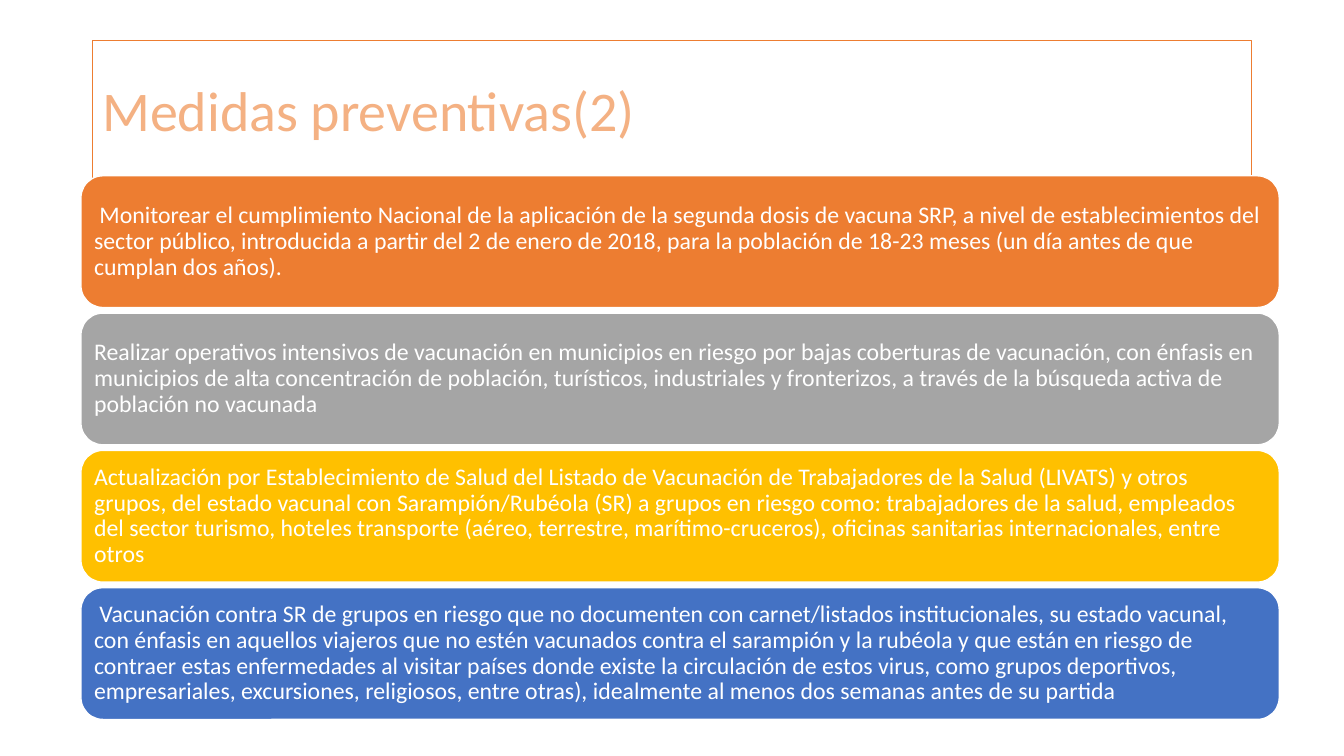
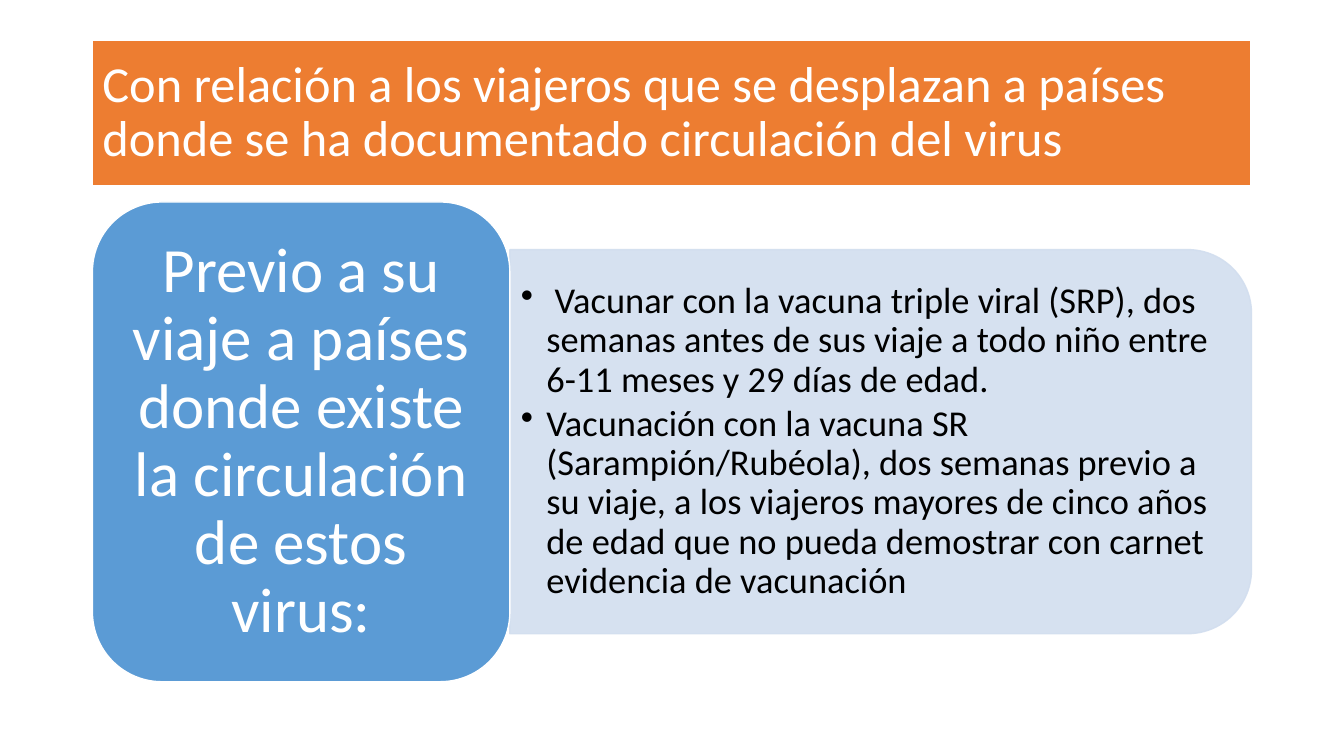
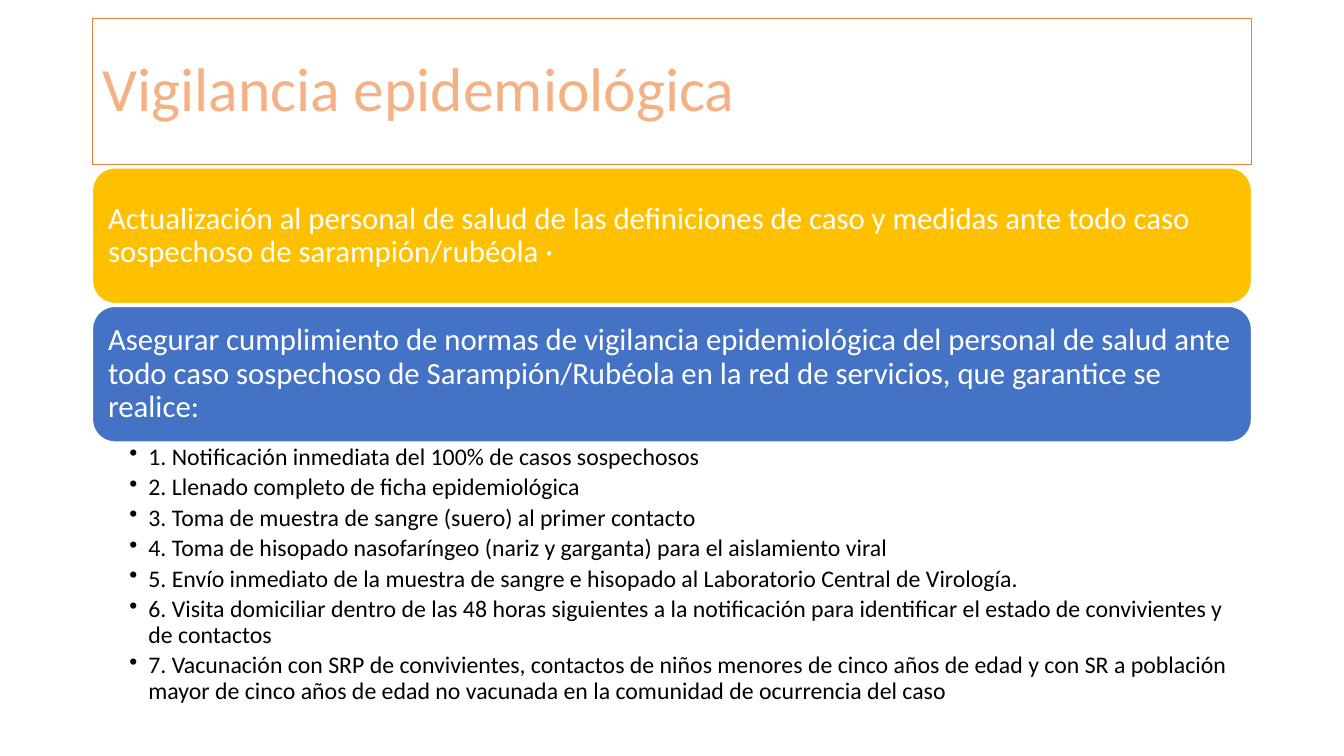
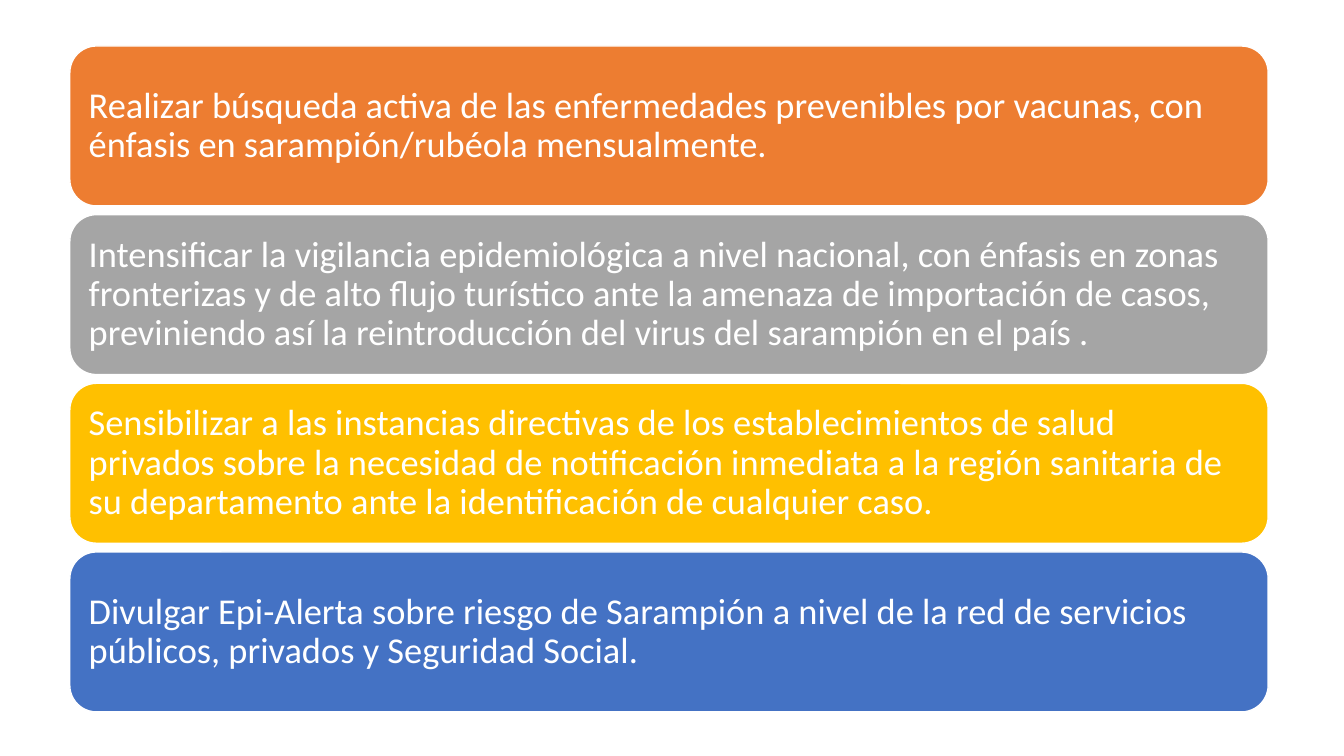
"""Build four slides on measles and rubella prevention and surveillance."""
from dataclasses import dataclass

from lxml import etree
from pptx import Presentation
from pptx import slide as sl
from pptx import util as u
from pptx.dml import color
from pptx.enum import shapes, text
from pptx.oxml import ns
from pptx.shapes import autoshape, base


@dataclass(frozen=True)
class Theme:
    font: str = "Calibri"
    white: str = "FFFFFF"
    black: str = "000000"
    orange: str = "ED7D31"
    peach: str = "F4B183"
    gray: str = "A5A5A5"
    gold: str = "FFC000"
    blue: str = "4472C4"
    sky: str = "5B9BD5"
    pale: str = "D2DEEF"
    small: int = 17
    medium: int = 22
    large: int = 26
    title_long: int = 36
    title_mid: int = 40
    title: int = 44
    lead: int = 45
    leading: float = 0.9


@dataclass(frozen=True)
class Box:
    left: float
    top: float
    width: float
    height: float


@dataclass(frozen=True)
class TextStyle:
    size: int
    color: str
    insets: tuple[float, float, float, float] = (0.25, 0.13, 0.25, 0.13)
    align: text.PP_ALIGN = text.PP_ALIGN.LEFT
    anchor: text.MSO_ANCHOR = text.MSO_ANCHOR.MIDDLE
    after: float = 0
    indent: float = 0


@dataclass(frozen=True)
class Bar:
    fill: str
    words: str


@dataclass(frozen=True)
class BarStack:
    first: Box
    gap: float
    size: int
    inset: float
    bars: tuple[Bar, ...]


T = Theme()
MARGIN, CONTENT_WIDTH = 2.33, 29.21
TITLE_TOP, TITLE_HEIGHT = 1.02, 3.68

PREVENTION = BarStack(Box(2.04, 4.43, 30.2, 3.32), 0.14, T.small, 0.17, (
    Bar(T.orange, " Monitorear el cumplimiento Nacional de la aplicación de la segunda dosis de vacuna SRP, "
        "a nivel de establecimientos del sector público, introducida a partir del 2 de enero de 2018, "
        "para la población de 18-23 meses (un día antes de que cumplan dos años)."),
    Bar(T.gray, "Realizar operativos intensivos de vacunación en municipios en riesgo por bajas coberturas "
        "de vacunación, con énfasis en municipios de alta concentración de población, turísticos, "
        "industriales y fronterizos, a través de la búsqueda activa de población no vacunada"),
    Bar(T.gold, "Actualización por Establecimiento de Salud del Listado de Vacunación de Trabajadores de la "
        "Salud (LIVATS) y otros grupos, del estado vacunal con Sarampión/Rubéola (SR) a grupos en riesgo "
        "como: trabajadores de la salud, empleados del sector turismo, hoteles transporte (aéreo, "
        "terrestre, marítimo-cruceros), oficinas sanitarias internacionales, entre otros"),
    Bar(T.blue, " Vacunación contra SR de grupos en riesgo que no documenten con carnet/listados "
        "institucionales, su estado vacunal, con énfasis en aquellos viajeros que no estén vacunados "
        "contra el sarampión y la rubéola y que están en riesgo de contraer estas enfermedades al visitar "
        "países donde existe la circulación de estos virus, como grupos deportivos, empresariales, "
        "excursiones, religiosos, entre otras), idealmente al menos dos semanas antes de su partida"),
))

SURVEILLANCE = BarStack(Box(MARGIN, 4.23, CONTENT_WIDTH, 3.42), 0.07, T.medium, 0.23, (
    Bar(T.gold, "Actualización al personal de salud de las definiciones de caso y medidas ante todo caso "
        "sospechoso de sarampión/rubéola ·"),
    Bar(T.blue, "Asegurar cumplimiento de normas de vigilancia epidemiológica del personal de salud ante "
        "todo caso sospechoso de Sarampión/Rubéola en la red de servicios, que garantice se realice:"),
))

ACTIONS = BarStack(Box(1.76, 1.16, 30.2, 4.03), 0.22, T.large, 0.28, (
    Bar(T.orange, "Realizar búsqueda activa de las enfermedades prevenibles por vacunas, con énfasis en "
        "sarampión/rubéola mensualmente."),
    Bar(T.gray, "Intensificar la vigilancia epidemiológica a nivel nacional, con énfasis en zonas "
        "fronterizas y de alto flujo turístico ante la amenaza de importación de casos, previniendo así "
        "la reintroducción del virus del sarampión en el país ."),
    Bar(T.gold, "Sensibilizar a las instancias directivas de los establecimientos de salud privados sobre "
        "la necesidad de notificación inmediata a la región sanitaria de su departamento ante la "
        "identificación de cualquier caso."),
    Bar(T.blue, "Divulgar Epi-Alerta sobre riesgo de Sarampión a nivel de la red de servicios públicos, "
        "privados y Seguridad Social."),
))

TRAVEL_POINTS = (
    " Vacunar con la vacuna triple viral (SRP), dos semanas antes de sus viaje a todo niño entre 6-11 "
    "meses y 29 días de edad.",
    "Vacunación con la vacuna SR (Sarampión/Rubéola), dos semanas previo a su viaje, a los viajeros "
    "mayores de cinco años de edad que no pueda demostrar con carnet evidencia de vacunación",
)

CASE_STEPS = (
    "1. Notificación inmediata del 100% de casos sospechosos",
    "2. Llenado completo de ficha epidemiológica",
    "3. Toma de muestra de sangre (suero) al primer contacto",
    "4. Toma de hisopado nasofaríngeo (nariz y garganta) para el aislamiento viral",
    "5. Envío inmediato de la muestra de sangre e hisopado al Laboratorio Central de Virología.",
    "6. Visita domiciliar dentro de las 48 horas siguientes a la notificación para identificar el estado "
    "de convivientes y de contactos",
    "7. Vacunación con SRP de convivientes, contactos de niños menores de cinco años de edad y con SR a "
    "población mayor de cinco años de edad no vacunada en la comunidad de ocurrencia del caso",
)


def lengths(box: Box) -> tuple[u.Cm, ...]:
    return tuple(u.Cm(v) for v in (box.left, box.top, box.width, box.height))


def write(sp: base.BaseShape, paragraphs: tuple[str, ...], style: TextStyle) -> None:
    tf = sp.text_frame
    tf.word_wrap = True
    tf.vertical_anchor = style.anchor
    tf.margin_left, tf.margin_top, tf.margin_right, tf.margin_bottom = (u.Cm(v) for v in style.insets)
    for i, words in enumerate(paragraphs):
        p = tf.add_paragraph() if i else tf.paragraphs[0]
        p.alignment = style.align
        p.line_spacing = T.leading
        p.space_after = u.Pt(style.after)
        if style.indent:
            pPr = p._p.get_or_add_pPr()
            pPr.set("marL", str(u.Cm(style.indent)))
            pPr.set("indent", str(-u.Cm(style.indent)))
            etree.SubElement(pPr, ns.qn("a:buChar")).set("char", "•")
        r = p.add_run()
        r.text = words
        r.font.name = T.font
        r.font.size = u.Pt(style.size)
        r.font.color.rgb = color.RGBColor.from_string(style.color)


def add_block(s: sl.Slide, kind: shapes.MSO_SHAPE, box: Box, fill: str, line: str = T.white,
              weight: float = 1) -> autoshape.Shape:
    sp = s.shapes.add_shape(kind, *lengths(box))
    sp.shadow.inherit = False
    sp.fill.solid()
    sp.fill.fore_color.rgb = color.RGBColor.from_string(fill)
    sp.line.color.rgb = color.RGBColor.from_string(line)
    sp.line.width = u.Pt(weight)
    return sp


def add_title(s: sl.Slide, words: str, size: int, top: float = TITLE_TOP, filled: bool = False) -> None:
    fill, line, ink = (T.orange, T.white, T.white) if filled else (T.white, T.orange, T.peach)
    box = Box(MARGIN, top, CONTENT_WIDTH, TITLE_HEIGHT)
    sp = add_block(s, shapes.MSO_SHAPE.RECTANGLE, box, fill, line, 1.5 if filled else 1)
    write(sp, (words,), TextStyle(size, ink))


def add_bars(s: sl.Slide, stack: BarStack) -> None:
    first = stack.first
    style = TextStyle(stack.size, T.white, (stack.inset,) * 4)
    for i, bar in enumerate(stack.bars):
        box = Box(first.left, first.top + i * (first.height + stack.gap), first.width, first.height)
        write(add_block(s, shapes.MSO_SHAPE.ROUNDED_RECTANGLE, box, bar.fill), (bar.words,), style)


def add_bullets(s: sl.Slide, box: Box, points: tuple[str, ...], style: TextStyle) -> None:
    write(s.shapes.add_textbox(*lengths(box)), points, style)


def add_panel(s: sl.Slide, box: Box) -> None:
    shift = (box.width - box.height) / 2
    upright = Box(box.left + shift, box.top - shift, box.height, box.width)
    sp = add_block(s, shapes.MSO_SHAPE.ROUND_2_SAME_RECTANGLE, upright, T.pale, T.pale)
    sp.rotation = 90
    for clr in sp._element.spPr.iter(ns.qn("a:srgbClr")):
        etree.SubElement(clr, ns.qn("a:alpha")).set("val", "90000")


def build_prevention(s: sl.Slide) -> None:
    add_title(s, "Medidas preventivas(2)", T.title_mid)
    add_bars(s, PREVENTION)


def build_travel(s: sl.Slide) -> None:
    add_title(s, "Con relación a los viajeros que se desplazan a países donde se ha documentado "
              "circulación del virus", T.title_long, filled=True)
    add_panel(s, Box(12.85, 6.29, 18.69, 9.68))
    add_bullets(s, Box(12.85, 6.76, 18.21, 8.74), TRAVEL_POINTS,
                TextStyle(T.large, T.black, (0.28, 0.13, 0.28, 0.13), after=3.5, indent=0.64))
    lead = add_block(s, shapes.MSO_SHAPE.ROUNDED_RECTANGLE, Box(MARGIN, 5.09, 10.52, 12.09), T.sky)
    write(lead, ("Previo a su viaje a países donde existe la circulación de estos virus:",),
          TextStyle(T.lead, T.white, (0.48, 0.23, 0.48, 0.23), text.PP_ALIGN.CENTER))


def build_surveillance(s: sl.Slide) -> None:
    add_title(s, "Vigilancia epidemiológica", T.title, top=0.46)
    add_bars(s, SURVEILLANCE)
    add_bullets(s, Box(MARGIN, 11.13, CONTENT_WIDTH, 7.09), CASE_STEPS,
                TextStyle(T.small, T.black, (0.93, 0.08, 0.43, 0.08), anchor=text.MSO_ANCHOR.TOP,
                          after=3.4, indent=0.48))


def build_actions(s: sl.Slide) -> None:
    add_bars(s, ACTIONS)


def main() -> None:
    prs = Presentation()
    prs.slide_width, prs.slide_height = u.Cm(33.87), u.Cm(19.05)
    for build in (build_prevention, build_travel, build_surveillance, build_actions):
        build(prs.slides.add_slide(prs.slide_layouts[6]))
    prs.save("out.pptx")


if __name__ == "__main__":
    main()
